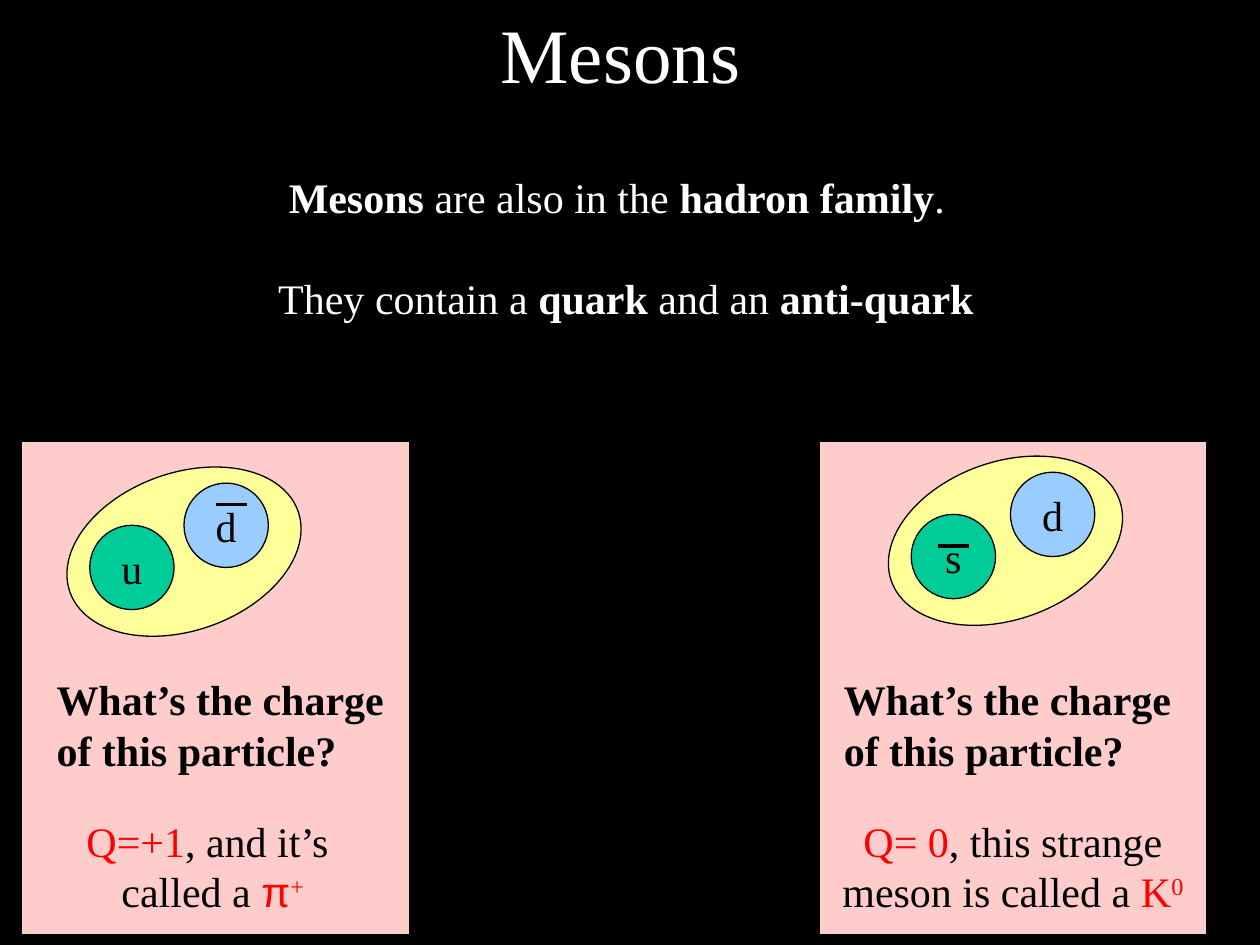
from lxml import etree
from pptx import Presentation
from pptx import util as u
from pptx.dml.color import RGBColor
from pptx.enum import shapes, text
from pptx.oxml.ns import qn

COLORS = {
    "black": "000000", "white": "FFFFFF", "red": "FF0000", "panel": "FFCCCC",
    "meson": "FFFF99", "green": "00CC99", "blue": "99CCFF",
}
SERIF, SANS = "Times New Roman", "Arial"
LINE_FACTOR = 1.2

# A run is (text, formats); all lengths are centimetres.
BOLD, RED = {"bold": True}, {"color": "red"}
TITLE = [[("Mesons ", {})]]
INTRO = [
    [(" ", {}), ("Mesons", BOLD), (" are also in the ", {}),
     ("hadron family", BOLD), (".", {})],
    [("They contain a ", {}), ("quark", BOLD), (" and an ", {}),
     ("anti-quark", BOLD)],
]
QUESTION = [[("What’s the charge \nof this particle?", BOLD)]]
PANELS = [
    {
        "left": 0.43, "meson": (1.27, 9.53),
        "quarks": [("u", "green", 0.54, 1.06, None),
                   ("d", "blue", 2.44, 0.21, (0.64, 0.43))],
        "question": (0.89, 13.46, 7.37, 2.29),
        "answer": (1.47, 16.31, 5.64, 2.29),
        "answer_text": [[("Q=+1", RED), (", and it’s \ncalled a ", {}),
                         ("π", {**RED, "name": SANS}),
                         ("+", {**RED, "raised": True})]],
    },
    {
        "left": 16.51, "meson": (17.83, 9.31),
        "quarks": [("s", "green", 0.54, 1.06, (0.53, 0.64)),
                   ("d", "blue", 2.54, 0.21, None)],
        "question": (16.76, 13.46, 7.37, 2.29),
        "answer": (16.71, 16.31, 7.42, 2.29),
        "answer_text": [[("Q= 0", RED),
                         (", this strange\nmeson is called a ", {}),
                         ("K", RED), ("0", {**RED, "raised": True})]],
    },
]
PANEL_TOP, PANEL_SIZE = 8.89, (7.82, 9.96)
MESON_SIZE, MESON_ROTATION = (4.88, 3.18), 340.5
QUARK_SIZE, BAR_LENGTH = 1.7, 0.64


def rgb(name):
    return RGBColor.from_string(COLORS[name])


def cm(*values):
    return [u.Cm(value) for value in values]


def write(frame, paragraphs, color, size=24, align=text.PP_ALIGN.LEFT, gap=0):
    """Fill a text frame; gap is the space after each paragraph in points."""
    frame.word_wrap = False
    frame.auto_size = text.MSO_AUTO_SIZE.NONE
    for index, runs in enumerate(paragraphs):
        paragraph = frame.add_paragraph() if index else frame.paragraphs[0]
        paragraph.alignment = align
        paragraph.line_spacing = u.Pt(size * LINE_FACTOR)
        paragraph.space_before = u.Pt(0)
        paragraph.space_after = u.Pt(gap)
        paragraph.font.name = SERIF
        paragraph.font.size = u.Pt(size)
        paragraph.font.color.rgb = rgb(color)
        for words, formats in runs:
            for line_index, line in enumerate(words.split("\n")):
                if line_index:
                    paragraph.add_line_break()
                run = paragraph.add_run()
                run.text = line
                run.font.name = formats.get("name", SERIF)
                run.font.size = u.Pt(size)
                run.font.bold = formats.get("bold", False)
                run.font.color.rgb = rgb(formats.get("color", color))
                if formats.get("raised"):
                    run.font._element.set("baseline", "30000")


def add_text(slide, box, paragraphs, color, **options):
    frame = slide.shapes.add_textbox(*cm(*box)).text_frame
    write(frame, paragraphs, color, **options)


def add_filled(collection, kind, box, fill):
    shape = collection.add_shape(kind, *cm(*box))
    shape.shadow.inherit = False
    shape.fill.solid()
    shape.fill.fore_color.rgb = rgb(fill)
    shape.line.color.rgb = rgb("black")
    shape.line.width = u.Pt(0.75)
    return shape


def add_antiquark_bar(collection, left, top):
    bar = collection.add_connector(shapes.MSO_CONNECTOR.STRAIGHT,
                                   *cm(left, top, left + BAR_LENGTH, top))
    bar.line.color.rgb = rgb("black")
    bar.line.width = u.Pt(2.25)
    etree.SubElement(bar._element.spPr, qn("a:effectLst"))


def add_meson(slide, origin, quarks):
    collection = slide.shapes.add_group_shape().shapes
    oval = shapes.MSO_SHAPE.OVAL
    meson = add_filled(collection, oval, (*origin, *MESON_SIZE), "meson")
    meson.rotation = MESON_ROTATION
    for letter, fill, dx, dy, bar in quarks:
        left, top = origin[0] + dx, origin[1] + dy
        quark = add_filled(collection, oval,
                           (left, top, QUARK_SIZE, QUARK_SIZE), fill)
        quark.text_frame.vertical_anchor = text.MSO_ANCHOR.MIDDLE
        write(quark.text_frame, [[(letter, {})]], "black",
              align=text.PP_ALIGN.CENTER)
        if bar:
            add_antiquark_bar(collection, left + bar[0], top + bar[1])


def main():
    presentation = Presentation()
    presentation.slide_width, presentation.slide_height = cm(25.4, 19.05)
    slide = presentation.slides.add_slide(presentation.slide_layouts[5])
    slide.background.fill.solid()
    slide.background.fill.fore_color.rgb = rgb("black")

    title = slide.shapes.title
    title.left, title.top, title.width, title.height = cm(1.9, 0.43, 21.6, 1.27)
    title.text_frame.vertical_anchor = text.MSO_ANCHOR.MIDDLE
    write(title.text_frame, TITLE, "white", size=44,
          align=text.PP_ALIGN.CENTER)
    add_text(slide, (5.36, 3.33, 14.66, 4.37), INTRO, "white",
             gap=24 * LINE_FACTOR)

    for panel in PANELS:
        add_filled(slide.shapes, shapes.MSO_SHAPE.RECTANGLE,
                   (panel["left"], PANEL_TOP, *PANEL_SIZE), "panel")
        add_meson(slide, panel["meson"], panel["quarks"])
        add_text(slide, panel["question"], QUESTION, "black")
        add_text(slide, panel["answer"], panel["answer_text"], "black",
                 align=text.PP_ALIGN.CENTER)

    presentation.save("out.pptx")


if __name__ == "__main__":
    main()
